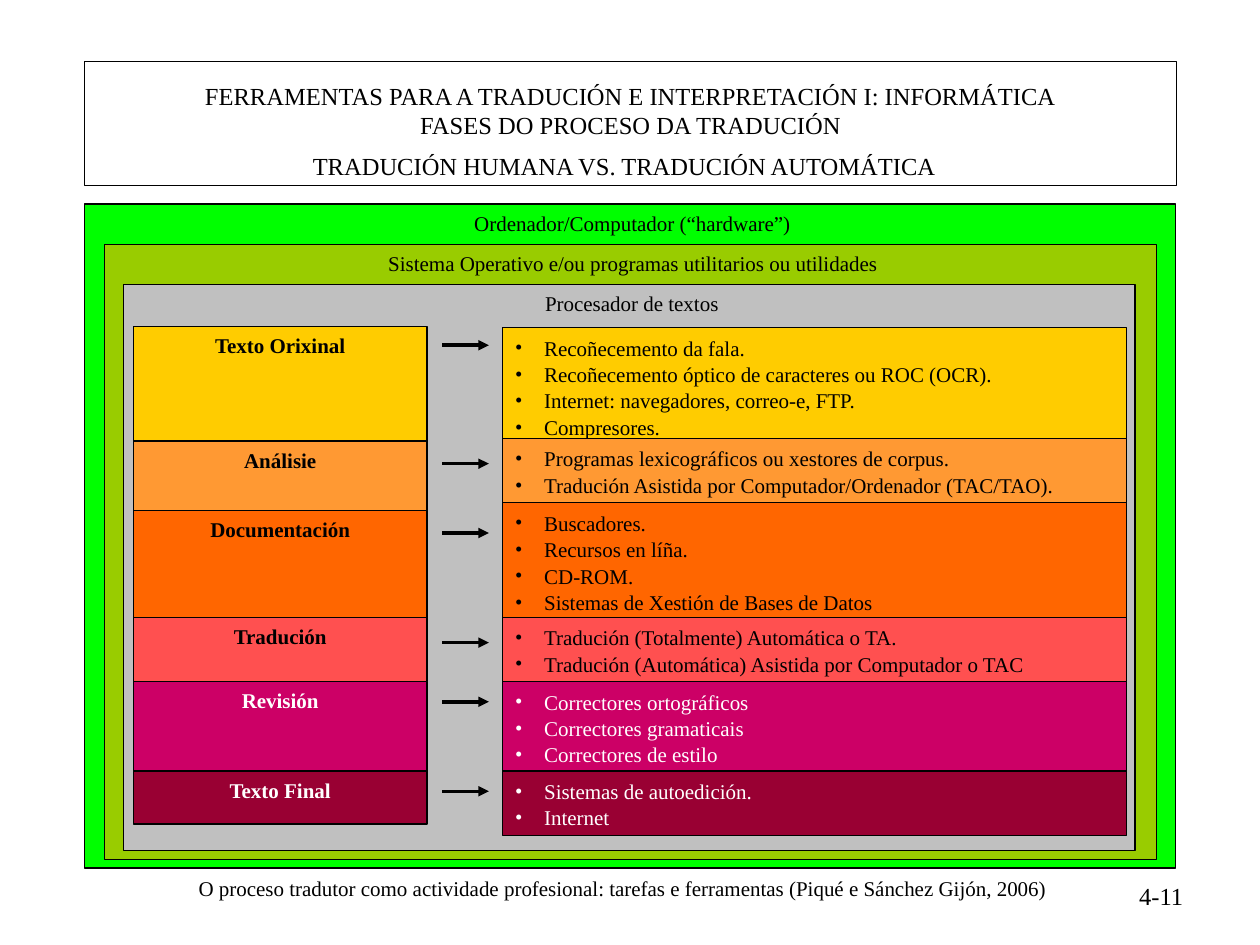
import pptx
import pptx.util
import pptx.dml.color
import pptx.enum.shapes
import pptx.enum.text
import pptx.oxml.ns
import lxml.etree

Inches = pptx.util.Inches
Pt = pptx.util.Pt
ALIGN = pptx.enum.text.PP_ALIGN
COLORS = {
    "black": "000000", "white": "FFFFFF", "green": "00FF00",
    "olive": "99CC00", "gray": "C0C0C0", "yellow": "FFCC00",
    "amber": "FF9933", "orange": "FF6600", "coral": "FF5050",
    "magenta": "CC0066", "wine": "990033",
}


def rgb(name):
    return pptx.dml.color.RGBColor.from_string(COLORS[name])


def add_element(parent, tag, **attributes):
    return lxml.etree.SubElement(parent, pptx.oxml.ns.qn(tag), **attributes)


class SlideBuilder:
    font = "Times New Roman"
    bullet_indent = Inches(0.23)

    def __init__(self, slide):
        self.slide = slide

    def frame(self, shape):
        frame = shape.text_frame
        frame.word_wrap = True
        frame.auto_size = pptx.enum.text.MSO_AUTO_SIZE.NONE
        frame.vertical_anchor = pptx.enum.text.MSO_ANCHOR.TOP
        return frame

    def run(self, paragraph, text, size=12, color="black", bold=False):
        run = paragraph.add_run()
        run.text = text
        run.font.name = self.font
        run.font.size = Pt(size)
        run.font.bold = bold
        run.font.color.rgb = rgb(color)

    def outline(self, shape):
        shape.line.color.rgb = rgb("black")
        shape.line.width = Pt(0.75)

    def title(self, lines, left, top, width, height):
        title = self.slide.shapes.title
        title.left, title.top = Inches(left), Inches(top)
        title.width, title.height = Inches(width), Inches(height)
        self.outline(title)
        frame = self.frame(title)
        frame.margin_top = Inches(0.15)
        paragraph = frame.paragraphs[0]
        paragraph.alignment = ALIGN.CENTER
        for index, line in enumerate(lines):
            if index:
                paragraph.add_line_break()
            self.run(paragraph, line, 14)

    def text(self, text, left, top, width, height, size=12, align=ALIGN.CENTER):
        box = self.slide.shapes.add_textbox(
            Inches(left), Inches(top), Inches(width), Inches(height))
        paragraph = self.frame(box).paragraphs[0]
        paragraph.alignment = align
        self.run(paragraph, text, size)

    def box(self, fill, left, top, width, height):
        box = self.slide.shapes.add_shape(
            pptx.enum.shapes.MSO_SHAPE.RECTANGLE,
            Inches(left), Inches(top), Inches(width), Inches(height))
        box.shadow.inherit = False
        box.fill.solid()
        box.fill.fore_color.rgb = rgb(fill)
        self.outline(box)
        return box

    def phase(self, name, fill, color, left, top, width, height):
        box = self.box(fill, left, top, width, height)
        paragraph = self.frame(box).paragraphs[0]
        paragraph.alignment = ALIGN.CENTER
        self.run(paragraph, name, color=color, bold=True)

    def tools(self, items, fill, color, left, top, width, height):
        frame = self.frame(self.box(fill, left, top, width, height))
        for index, item in enumerate(items):
            paragraph = frame.add_paragraph() if index else frame.paragraphs[0]
            properties = paragraph._p.get_or_add_pPr()
            properties.set("marL", str(self.bullet_indent))
            properties.set("indent", str(-self.bullet_indent))
            add_element(properties, "a:buFont", typeface=self.font)
            add_element(properties, "a:buChar", char="•")
            paragraph.alignment = ALIGN.LEFT
            paragraph.line_spacing = 1.05
            self.run(paragraph, item, color=color)

    def arrow(self, left, right, y):
        arrow = self.slide.shapes.add_connector(
            pptx.enum.shapes.MSO_CONNECTOR.STRAIGHT,
            Inches(left), Inches(y), Inches(right), Inches(y))
        arrow.line.color.rgb = rgb("black")
        arrow.line.width = Pt(2)
        add_element(arrow.line._get_or_add_ln(), "a:tailEnd", type="triangle")
        add_element(arrow._element.spPr, "a:effectLst")


LAYERS = [
    ("Ordenador/Computador (“hardware”)", "green", (0.67, 1.62, 8.66, 5.27)),
    ("Sistema Operativo e/ou programas utilitarios ou utilidades", "olive",
     (0.83, 1.94, 8.35, 4.88)),
    ("Procesador de textos", "gray", (0.98, 2.26, 8.03, 4.49)),
]

PHASES = [
    ("Texto Orixinal", "yellow", "black", (2.59, 0.93), (2.6, 0.91), 2.74,
     ["Recoñecemento da fala.",
      "Recoñecemento óptico de caracteres ou ROC (OCR).",
      "Internet: navegadores, correo-e, FTP.",
      "Compresores."]),
    ("Análisie", "amber", "black", (3.5, 0.55), (3.48, 0.51), 3.68,
     ["Programas lexicográficos ou xestores de corpus.",
      "Tradución Asistida por Computador/Ordenador (TAC/TAO)."]),
    ("Documentación", "orange", "black", (4.05, 0.9), (3.99, 0.91), 4.23,
     ["Buscadores.",
      "Recursos en líña.",
      "CD-ROM.",
      "Sistemas de Xestión de Bases de Datos"]),
    ("Tradución", "coral", "black", (4.9, 0.51), (4.9, 0.51), 5.1,
     ["Tradución (Totalmente) Automática o TA.",
      "Tradución (Automática) Asistida por Computador o TAC"]),
    ("Revisión", "magenta", "white", (5.41, 0.71), (5.41, 0.71), 5.57,
     ["Correctores ortográficos",
      "Correctores gramaticais",
      "Correctores de estilo"]),
    ("Texto Final", "wine", "white", (6.12, 0.42), (6.12, 0.51), 6.28,
     ["Sistemas de autoedición.",
      "Internet"]),
]


def main():
    deck = pptx.Presentation()
    deck.slide_width, deck.slide_height = Inches(10), Inches(7.5)
    builder = SlideBuilder(deck.slides.add_slide(deck.slide_layouts[5]))

    builder.title(
        ["FERRAMENTAS PARA A TRADUCIÓN E INTERPRETACIÓN I: INFORMÁTICA",
         "FASES DO PROCESO DA TRADUCIÓN"], 0.67, 0.49, 8.67, 0.98)
    builder.text("4-11", 6.42, 6.94, 3.07, 0.28, 14, ALIGN.RIGHT)

    for caption, fill, (left, top, width, height) in LAYERS:
        builder.box(fill, left, top, width, height)
        builder.text(caption, left + 0.04, top, width - 0.04, 0.3)

    for name, fill, color, (top, height), _, _, _ in PHASES:
        builder.phase(name, fill, color, 1.06, top, 2.33, height)
    for _, fill, color, _, (top, height), _, items in PHASES:
        builder.tools(items, fill, color, 3.99, top, 4.95, height)
    for _, _, _, _, _, arrow_y, _ in PHASES:
        builder.arrow(3.51, 3.88, arrow_y)

    builder.text("TRADUCIÓN HUMANA VS. TRADUCIÓN AUTOMÁTICA",
                 0.98, 1.15, 7.95, 0.34, 14)
    builder.text("O proceso tradutor como actividade profesional: tarefas e "
                 "ferramentas (Piqué e Sánchez Gijón, 2006)",
                 1.19, 6.9, 7.51, 0.3)
    deck.save("out.pptx")


if __name__ == "__main__":
    main()
